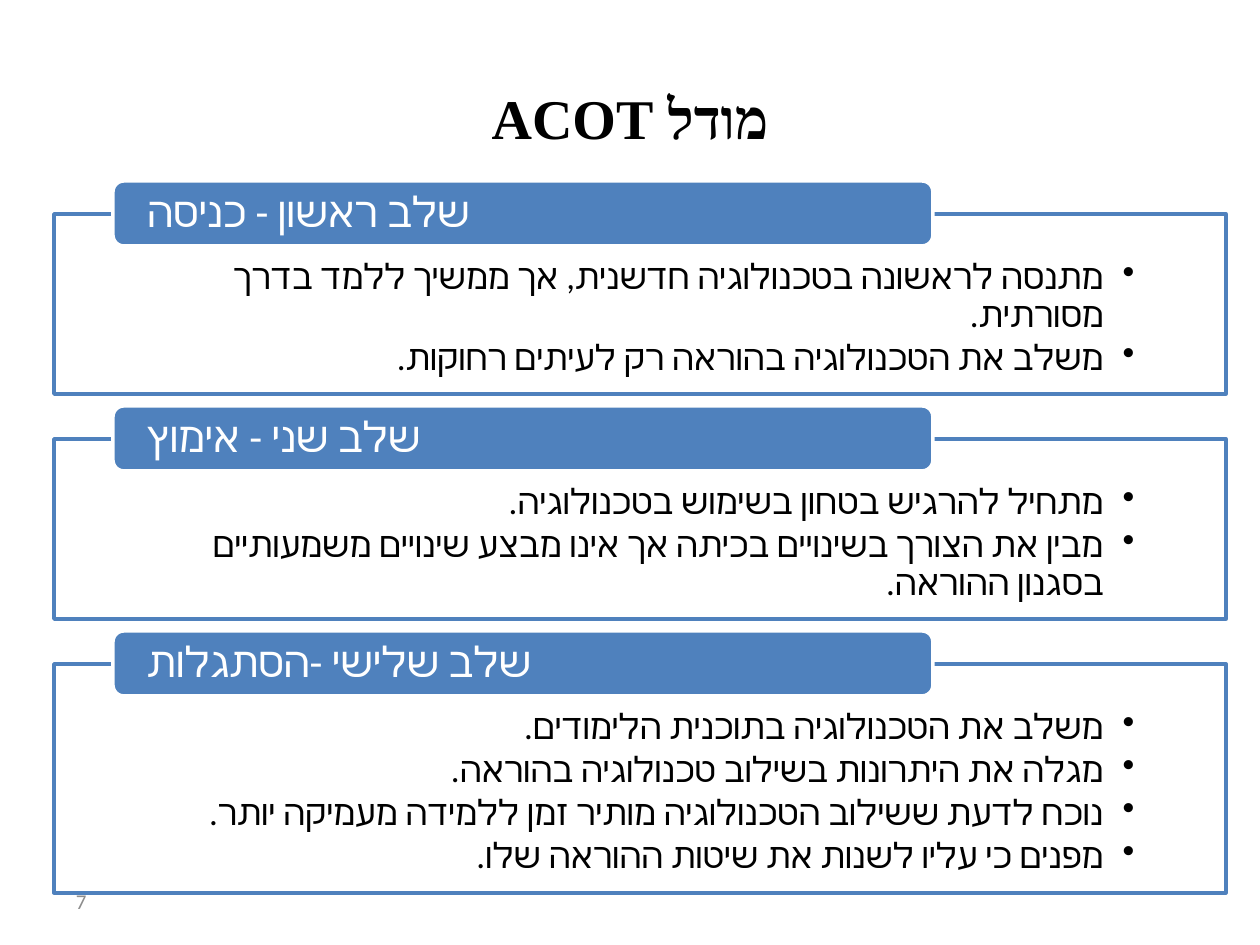
import pptx
import pptx.util
import pptx.dml.color
import pptx.enum.shapes
import pptx.enum.text
import pptx.oxml.ns
from lxml import etree

EMU_PER_PX = 914400 / 126
COLORS = {"blue": "4F81BD", "white": "FFFFFF", "black": "000000", "gray": "8C8C8C"}
SHAPES = pptx.enum.shapes.MSO_SHAPE
ALIGN = pptx.enum.text.PP_ALIGN
ANCHOR = pptx.enum.text.MSO_ANCHOR

BOX_LEFT, BOX_WIDTH, BOX_TOP, BOX_GAP = 54, 1172, 214, 45
TAB_LEFT, TAB_WIDTH, TAB_HEIGHT, TAB_RISE = 113, 820, 65, 33

STAGES = [
    ("שלב ראשון - כניסה", 180, [
        "מתנסה לראשונה בטכנולוגיה חדשנית, אך ממשיך ללמד בדרך מסורתית.",
        "משלב את הטכנולוגיה בהוראה רק לעיתים רחוקות.",
    ]),
    ("שלב שני - אימוץ", 180, [
        "מתחיל להרגיש בטחון בשימוש בטכנולוגיה.",
        "מבין את הצורך בשינויים בכיתה אך אינו מבצע שינויים משמעותיים בסגנון ההוראה.",
    ]),
    ("שלב שלישי -הסתגלות", 229, [
        "משלב את הטכנולוגיה בתוכנית הלימודים.",
        "מגלה את היתרונות בשילוב טכנולוגיה בהוראה.",
        "נוכח לדעת ששילוב הטכנולוגיה מותיר זמן ללמידה מעמיקה יותר.",
        "מפנים כי עליו לשנות את שיטות ההוראה שלו.",
    ]),
]


def px(n):
    return pptx.util.Emu(round(n * EMU_PER_PX))


def rgb(name):
    return pptx.dml.color.RGBColor.from_string(COLORS[name])


def add_child(parent, tag, **attrs):
    return etree.SubElement(parent, pptx.oxml.ns.qn(tag), **attrs)


class Deck:
    def __init__(self, slide, font="Calibri"):
        self.s = slide
        self.font = font

    def paragraphs(self, tf, lines, size, color, align=ALIGN.LEFT, anchor=ANCHOR.MIDDLE,
                   insets=(13, 6, 13, 6), spacing=None, bullets=False, bold=False, font=None):
        """Fill a text frame with right-to-left paragraphs."""
        font = font or self.font
        tf.word_wrap = True
        tf.vertical_anchor = anchor
        tf.margin_left, tf.margin_top, tf.margin_right, tf.margin_bottom = map(px, insets)
        for i, line in enumerate(lines):
            p = tf.add_paragraph() if i else tf.paragraphs[0]
            p.alignment = align
            pPr = p._p.get_or_add_pPr()
            pPr.set("rtl", "1")
            if spacing:
                p.line_spacing = spacing
            if bullets:
                p.level = 1
                p.space_after = pptx.util.Pt(3)
                pPr.set("marL", str(pptx.util.Inches(0.25)))
                pPr.set("indent", str(-pptx.util.Inches(0.25)))
                add_child(pPr, "a:buChar", char="•")
            r = p.add_run()
            r.text = line
            r.font.size = pptx.util.Pt(size)
            r.font.bold = bold
            r.font.color.rgb = rgb(color)
            r.font.name = font
            add_child(r._r.get_or_add_rPr(), "a:cs", typeface=font)

    def text(self, x, y, w, h, line, size, color, **style):
        sp = self.s.shapes.add_textbox(px(x), px(y), px(w), px(h))
        self.paragraphs(sp.text_frame, [line], size, color, **style)

    def shape(self, kind, x, y, w, h, fill, line):
        sp = self.s.shapes.add_shape(kind, px(x), px(y), px(w), px(h))
        sp.shadow.inherit = False
        sp.fill.solid()
        sp.fill.fore_color.rgb = rgb(fill)
        sp.line.color.rgb = rgb(line)
        sp.line.width = pptx.util.Pt(2)
        return sp

    def stage(self, top, height, heading, points):
        """Draw an outlined box of bullets with a heading tab over its top edge."""
        box = self.shape(SHAPES.RECTANGLE, BOX_LEFT, top, BOX_WIDTH, height, "white", "blue")
        color = box._element.spPr.find(".//" + pptx.oxml.ns.qn("a:srgbClr"))
        add_child(color, "a:alpha", val="90000")
        self.paragraphs(box.text_frame, points, 20, "black", align=ALIGN.RIGHT,
                        anchor=ANCHOR.TOP, insets=(91, 45, 91, 20), spacing=0.9, bullets=True)
        tab = self.shape(SHAPES.ROUNDED_RECTANGLE, TAB_LEFT, top - TAB_RISE,
                         TAB_WIDTH, TAB_HEIGHT, "blue", "white")
        self.paragraphs(tab.text_frame, [heading], 24, "white",
                        insets=(31, 0, 31, 0), spacing=0.9)


def main():
    prs = pptx.Presentation()
    prs.slide_width, prs.slide_height = px(1260), px(945)
    deck = Deck(prs.slides.add_slide(prs.slide_layouts[6]))
    deck.text(63, 38, 1134, 158, "מודל ACOT", 32, "black", align=ALIGN.CENTER,
              bold=True, font="Times New Roman")
    top = BOX_TOP
    for heading, height, points in STAGES:
        deck.stage(top, height, heading, points)
        top += height + BOX_GAP
    deck.text(63, 876, 294, 50, "7", 12, "gray")
    prs.save("out.pptx")


if __name__ == "__main__":
    main()
